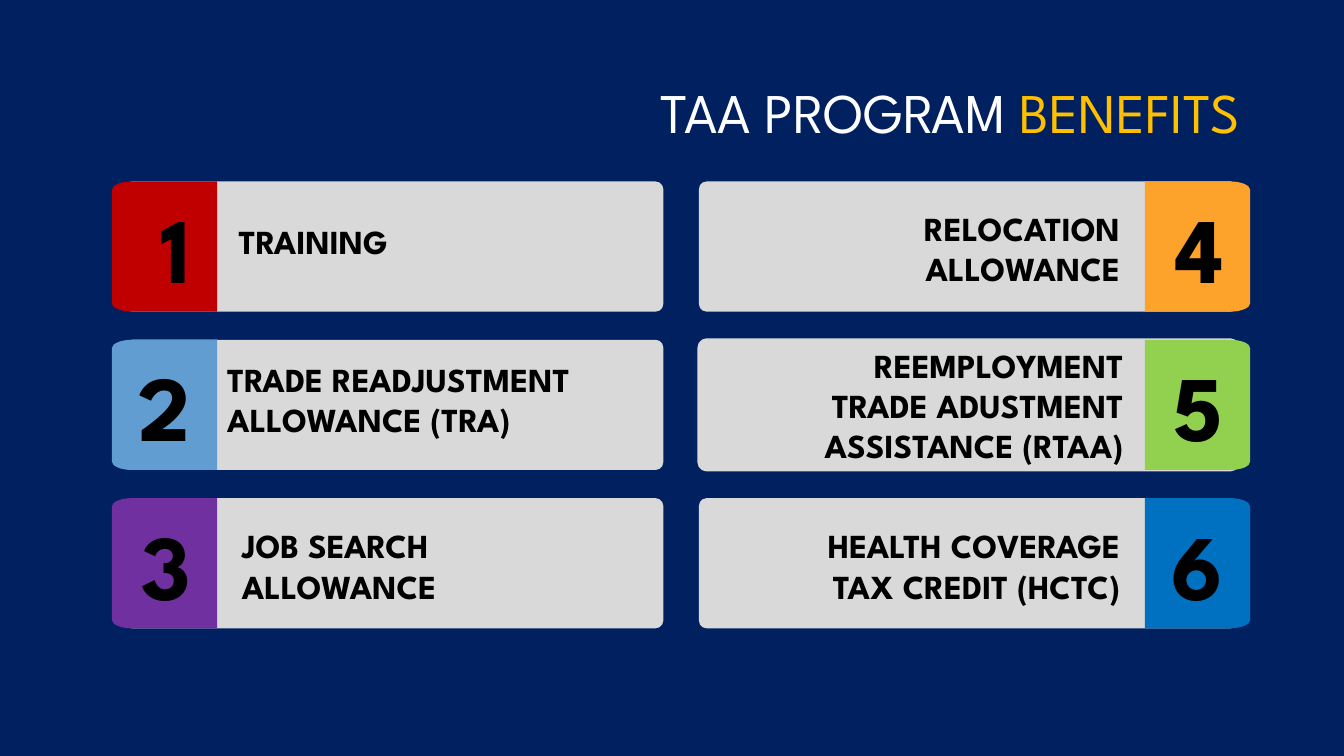
from dataclasses import dataclass

import pptx
import pptx.util
from lxml import etree
from pptx.dml.color import RGBColor
from pptx.enum.shapes import MSO_SHAPE
from pptx.enum.text import MSO_ANCHOR, PP_ALIGN
from pptx.oxml.ns import qn
from pptx.util import Pt

NAVY = RGBColor(0x00, 0x20, 0x60)
WHITE = RGBColor(0xFF, 0xFF, 0xFF)
GOLD = RGBColor(0xFF, 0xC0, 0x00)
BLACK = RGBColor(0x00, 0x00, 0x00)
GREY = RGBColor(0xD9, 0xD9, 0xD9)
RED = RGBColor(0xC0, 0x00, 0x00)
SKY = RGBColor(0x62, 0x9D, 0xD1)
PURPLE = RGBColor(0x70, 0x30, 0xA0)
ORANGE = RGBColor(0xFD, 0xA3, 0x2B)
GREEN = RGBColor(0x92, 0xD0, 0x50)
BLUE = RGBColor(0x00, 0x70, 0xC0)

FONT = "League Spartan"
ROWS = 3
FIRST_TOP = 129.6
ROW_PITCH = 113.1
BAR_WIDTH, BAR_HEIGHT = 385.2, 93
TAB_WIDTH = 75.2
CORNER_WIDTH, CORNER_HEIGHT = 14.4, 6
CURVE = 0.45


@dataclass(frozen=True)
class Side:
    bar_left: float
    outer_edge: float
    inward: int
    number_left: float
    align: PP_ALIGN


@dataclass(frozen=True)
class Benefit:
    label: str
    color: RGBColor
    left: float
    top: float
    width: float = 255.6
    height: float = 65.5
    outlined: bool = False


LEFT = Side(88.6, 79.9, 1, 99.1, PP_ALIGN.LEFT)
RIGHT = Side(499.2, 893, -1, 836.6, PP_ALIGN.RIGHT)

BENEFITS = [
    Benefit("TRAINING", RED, 163.4, 154.1, height=36),
    Benefit("TRADE READJUSTMENT ALLOWANCE (TRA)", SKY, 155.2, 252.7, 319, 80),
    Benefit("JOB SEARCH ALLOWANCE", PURPLE, 165.6, 371.7),
    Benefit("RELOCATION ALLOWANCE", ORANGE, 551.5, 144.7),
    Benefit("REEMPLOYMENT TRADE ADUSTMENT ASSISTANCE (RTAA)", GREEN,
            554, 242.6, height=94.3, outlined=True),
    Benefit("HEALTH COVERAGE TAX CREDIT (HCTC)", BLUE, 551.5, 371.5),
]


def add_text(page, text: str, left: float, top: float, width: float, height: float,
             size: float, align: PP_ALIGN, bold: bool = True):
    box = page.shapes.add_textbox(Pt(left), Pt(top), Pt(width), Pt(height))
    frame = box.text_frame
    frame.word_wrap = True
    frame.text = text
    para = frame.paragraphs[0]
    para.alignment = align
    style_span(para.runs[0], size, BLACK, bold)
    return box


def style_span(span, size: float, color: RGBColor, bold: bool) -> None:
    span.font.name = FONT
    span.font.size = Pt(size)
    span.font.bold = bold
    span.font.color.rgb = color


def add_title(page) -> None:
    box = add_text(page, "TAA PROGRAM ", 214.6, 28.8, 678.2, 101.5, 40, PP_ALIGN.RIGHT, False)
    box.text_frame.vertical_anchor = MSO_ANCHOR.MIDDLE
    para = box.text_frame.paragraphs[0]
    para.runs[0].font.color.rgb = WHITE
    accent = para.add_run()
    accent.text = "BENEFITS"
    style_span(accent, 40, GOLD, False)


def paint(shape, color: RGBColor) -> None:
    shape.shadow.inherit = False
    shape.fill.solid()
    shape.fill.fore_color.rgb = color
    shape.line.fill.background()


def add_bar(page, side: Side, top: float, outlined: bool) -> None:
    bar = page.shapes.add_shape(MSO_SHAPE.ROUNDED_RECTANGLE, Pt(side.bar_left), Pt(top),
                                Pt(BAR_WIDTH), Pt(BAR_HEIGHT))
    bar.adjustments[0] = 0.06
    paint(bar, GREY)
    if outlined:
        bar.line.color.rgb = GREY
        bar.line.width = Pt(2)


def bend(segment, controls: list[tuple[float, float]], inward: int) -> None:
    segment.tag = qn("a:cubicBezTo")
    for position, (across, down) in enumerate(controls):
        point = etree.Element(qn("a:pt"))
        point.set("x", str(Pt(across if inward > 0 else TAB_WIDTH - across)))
        point.set("y", str(Pt(down)))
        segment.insert(position, point)


def add_tab(page, side: Side, top: float, color: RGBColor) -> None:
    upper = [(TAB_WIDTH, 0), (CORNER_WIDTH, 0), (0, CORNER_HEIGHT)]
    lower = [(across, BAR_HEIGHT - down) for across, down in reversed(upper)]
    points = [(Pt(side.outer_edge + side.inward * across), Pt(top + down))
              for across, down in upper + lower]
    builder = page.shapes.build_freeform(*points[0], scale=1.0)
    builder.add_line_segments(points[1:], close=True)
    tab = builder.convert_to_shape()
    segments = list(tab._element.iter(qn("a:lnTo")))
    controls = [(CORNER_WIDTH * CURVE, 0), (0, CORNER_HEIGHT * CURVE)]
    mirrored = [(across, BAR_HEIGHT - down) for across, down in reversed(controls)]
    bend(segments[1], controls, side.inward)
    bend(segments[3], mirrored, side.inward)
    paint(tab, color)


def add_number(page, number: int, side: Side, top: float) -> None:
    box = add_text(page, str(number), side.number_left, top + 25, 37.4, 43.2, 66, PP_ALIGN.RIGHT)
    frame = box.text_frame
    frame.vertical_anchor = MSO_ANCHOR.MIDDLE
    frame.margin_left = frame.margin_right = frame.margin_top = frame.margin_bottom = 0


def add_benefit(page, index: int, benefit: Benefit) -> None:
    column, row = divmod(index, ROWS)
    side = (LEFT, RIGHT)[column]
    top = FIRST_TOP + row * ROW_PITCH
    add_bar(page, side, top, benefit.outlined)
    add_tab(page, side, top, benefit.color)
    add_number(page, index + 1, side, top)
    add_text(page, benefit.label, benefit.left, benefit.top, benefit.width, benefit.height,
             24, side.align)


def main() -> None:
    deck = pptx.Presentation()
    deck.slide_width, deck.slide_height = Pt(960), Pt(540)
    page = deck.slides.add_slide(deck.slide_layouts[6])
    page.background.fill.solid()
    page.background.fill.fore_color.rgb = NAVY
    add_title(page)
    for index, benefit in enumerate(BENEFITS):
        add_benefit(page, index, benefit)
    deck.save("out.pptx")


if __name__ == "__main__":
    main()
